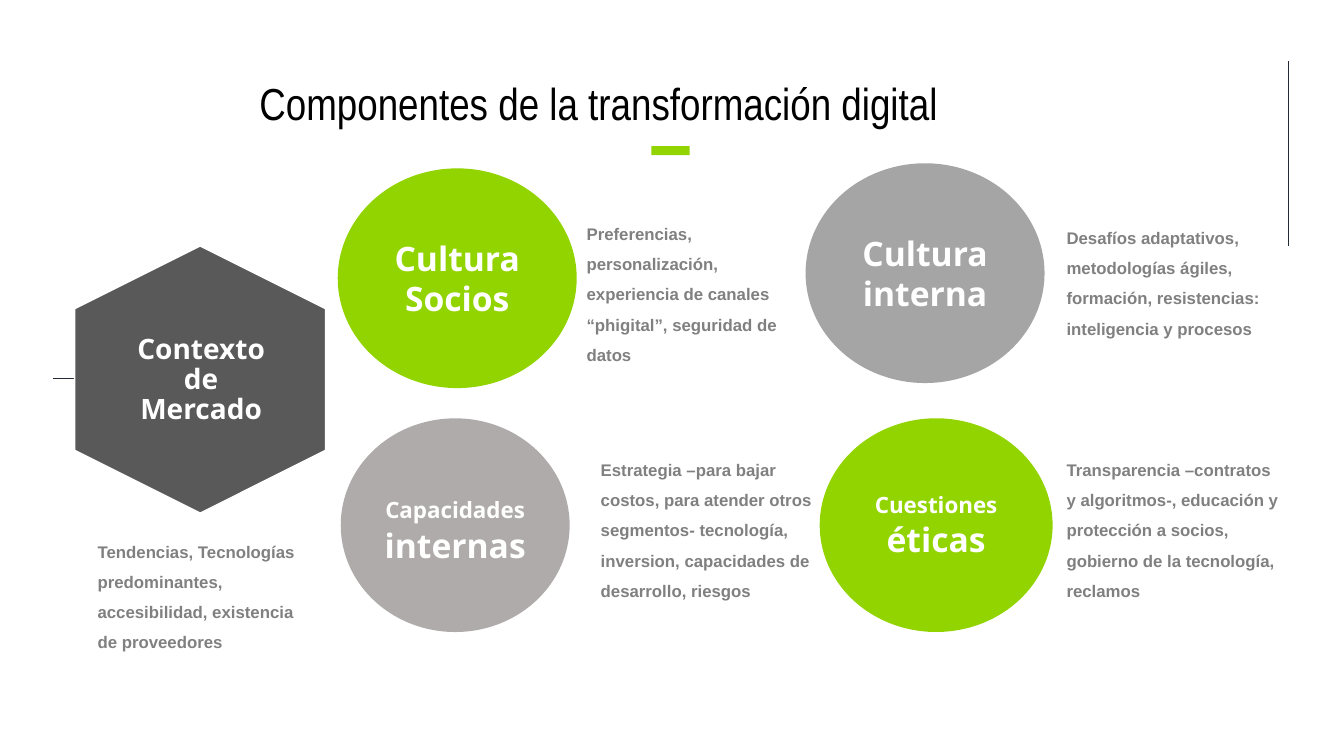
from dataclasses import dataclass

from lxml.etree import SubElement
from pptx import Presentation
from pptx.dml.color import RGBColor
from pptx.enum.shapes import MSO_CONNECTOR, MSO_SHAPE
from pptx.enum.text import MSO_ANCHOR, PP_ALIGN
from pptx.oxml.ns import qn
from pptx.shapes.autoshape import Shape
from pptx.slide import Slide
from pptx.text.text import _Run
from pptx.util import Emu, Pt

EMU_PER_PX = 9144  # 100 px to the inch


@dataclass(frozen=True)
class Theme:
    green: str = "92D400"
    gray: str = "A5A5A5"
    warm_gray: str = "AFABAB"
    dark_gray: str = "595959"
    note_gray: str = "808080"
    navy: str = "222A35"
    white: str = "FFFFFF"
    black: str = "000000"
    title_font: str = "Arial Narrow"
    label_font: str = "Open Sans"
    note_font: str = "Arial"
    title_size: int = 32
    label_size: int = 24
    context_size: int = 20
    small_label_size: int = 16
    note_size: int = 12


THEME = Theme()


@dataclass(frozen=True)
class Box:
    left: int
    top: int
    width: int
    height: int

    def emu(self) -> tuple[Emu, Emu, Emu, Emu]:
        return px(self.left), px(self.top), px(self.width), px(self.height)


@dataclass(frozen=True)
class Component:
    box: Box
    color: str
    label: tuple[tuple[str, int], ...]


@dataclass(frozen=True)
class Note:
    box: Box
    text: str


@dataclass(frozen=True)
class Rule:
    x1: int
    y1: int
    x2: int
    y2: int


COMPONENTS = (
    Component(Box(338, 415, 227, 212), THEME.warm_gray,
              (("Capacidades", THEME.small_label_size), (" internas", THEME.label_size))),
    Component(Box(813, 415, 231, 212), THEME.green,
              (("Cuestiones ", THEME.small_label_size), ("éticas", THEME.label_size))),
    Component(Box(335, 167, 237, 218), THEME.green, (("Cultura Socios", THEME.label_size),)),
    Component(Box(799, 162, 237, 218), THEME.gray, (("Cultura interna", THEME.label_size),)),
)
NOTES = (
    Note(Box(87, 522, 230, 128),
         "Tendencias, Tecnologías predominantes, accesibilidad, existencia de proveedores"),
    Note(Box(572, 207, 230, 128),
         "Preferencias, personalización, experiencia de canales “phigital”, seguridad de datos"),
    Note(Box(586, 441, 230, 158),
         "Estrategia –para bajar costos, para atender otros segmentos- tecnología, "
         "inversion, capacidades de desarrollo, riesgos"),
    Note(Box(1048, 211, 230, 128),
         "Desafíos adaptativos, metodologías ágiles, formación, resistencias: "
         "inteligencia y procesos"),
    Note(Box(1048, 441, 230, 128),
         "Transparencia –contratos y algoritmos-, educación y protección a socios, "
         "gobierno de la tecnología, reclamos"),
)
RULES = (Rule(53, 375, 124, 375), Rule(1278, 244, 1278, 61))


def px(length: int) -> Emu:
    return Emu(length * EMU_PER_PX)


def rgb(color: str) -> RGBColor:
    return RGBColor.from_string(color)


def style_run(run: _Run, font: str, size: int, color: str, bold: bool = True) -> None:
    run.font.name = font
    run.font.size = Pt(size)
    run.font.bold = bold
    run.font.color.rgb = rgb(color)


def add_filled_shape(slide: Slide, kind: MSO_SHAPE, box: Box, color: str) -> Shape:
    shape = slide.shapes.add_shape(kind, *box.emu())
    shape.shadow.inherit = False
    shape.fill.solid()
    shape.fill.fore_color.rgb = rgb(color)
    shape.line.fill.background()
    return shape


def add_label(shape: Shape, parts: tuple[tuple[str, int], ...]) -> None:
    """Centre the label parts in the shape, each part at its own size."""
    frame = shape.text_frame
    frame.word_wrap = True
    frame.vertical_anchor = MSO_ANCHOR.MIDDLE
    paragraph = frame.paragraphs[0]
    paragraph.alignment = PP_ALIGN.CENTER
    for text, size in parts:
        run = paragraph.add_run()
        run.text = text
        style_run(run, THEME.label_font, size, THEME.white)


def add_component(slide: Slide, component: Component) -> None:
    ellipse = add_filled_shape(slide, MSO_SHAPE.OVAL, component.box, component.color)
    add_label(ellipse, component.label)


def add_note(slide: Slide, note: Note) -> None:
    frame = slide.shapes.add_textbox(*note.box.emu()).text_frame
    frame.word_wrap = True
    frame.text = note.text
    paragraph = frame.paragraphs[0]
    paragraph.line_spacing = 1.5
    style_run(paragraph.runs[0], THEME.note_font, THEME.note_size, THEME.note_gray)


def add_rule(slide: Slide, rule: Rule) -> None:
    connector = slide.shapes.add_connector(
        MSO_CONNECTOR.STRAIGHT, px(rule.x1), px(rule.y1), px(rule.x2), px(rule.y2))
    connector.line.color.rgb = rgb(THEME.navy)
    connector.line.width = Pt(0.5)
    SubElement(connector._element.spPr, qn("a:effectLst"))


def add_title(slide: Slide) -> None:
    frame = slide.shapes.add_textbox(*Box(244, 70, 700, 64).emu()).text_frame
    frame.word_wrap = False
    frame.text = "Componentes de la transformación digital"
    paragraph = frame.paragraphs[0]
    paragraph.alignment = PP_ALIGN.CENTER
    style_run(paragraph.runs[0], THEME.title_font, THEME.title_size, THEME.black, bold=False)
    add_filled_shape(slide, MSO_SHAPE.RECTANGLE, Box(646, 145, 38, 9), THEME.green)


def add_market_context(slide: Slide) -> None:
    hexagon = add_filled_shape(slide, MSO_SHAPE.HEXAGON, Box(66, 252, 265, 249), THEME.dark_gray)
    hexagon.rotation = 90
    hexagon.line.color.rgb = rgb(THEME.white)
    hexagon.line.width = Pt(1)
    panel = add_filled_shape(slide, MSO_SHAPE.RECTANGLE, Box(124, 300, 151, 155), THEME.dark_gray)
    add_label(panel, (("Contexto de Mercado", THEME.context_size),))
    frame = panel.text_frame
    frame.margin_left = frame.margin_right = frame.margin_top = frame.margin_bottom = px(9)
    frame.paragraphs[0].line_spacing = 0.9


def main() -> None:
    presentation = Presentation()
    presentation.slide_width, presentation.slide_height = px(1333), px(750)
    slide = presentation.slides.add_slide(presentation.slide_layouts[6])
    for rule in RULES:
        add_rule(slide, rule)
    add_title(slide)
    for component in COMPONENTS:
        add_component(slide, component)
    add_market_context(slide)
    for note in NOTES:
        add_note(slide, note)
    presentation.save("out.pptx")


if __name__ == "__main__":
    main()
